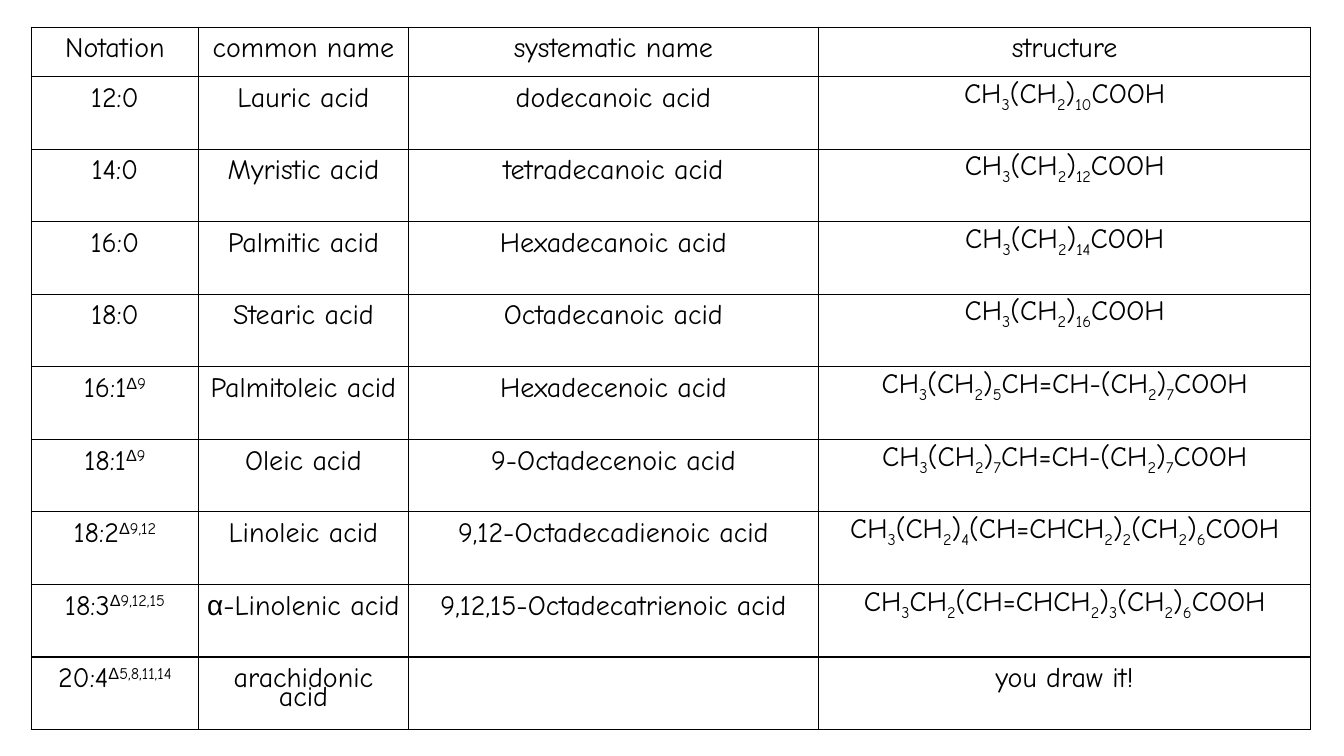
from dataclasses import dataclass
from itertools import groupby

from lxml.etree import SubElement
from pptx import Presentation
from pptx.dml.color import RGBColor
from pptx.enum.text import PP_ALIGN
from pptx.oxml.ns import qn
from pptx.util import Inches, Pt


@dataclass(frozen=True)
class Theme:
    ink: str = "000000"
    font: str = "Comic Neue"
    greek_font: str = "Arial"
    text_size: int = 20
    line_pitch: float = 13.5
    border: int = 1
    subscript: int = -25
    superscript: int = 30


THEME = Theme()

# Table grid, in inches
LEFT, TOP = 0.31, 0.27
COLUMNS = [1.66, 2.08, 4.07, 4.88]
HEADER_HEIGHT, ROW_HEIGHT = 0.49, 0.72
SIDE_MARGIN = 0.07

HEADINGS = ("Notation", "common name", "systematic name", "structure")
ACIDS = [
    ("12:0", "Lauric acid", "dodecanoic acid", "CH3(CH2)10COOH"),
    ("14:0", "Myristic acid", "tetradecanoic acid", "CH3(CH2)12COOH"),
    ("16:0", "Palmitic acid", "Hexadecanoic acid", "CH3(CH2)14COOH"),
    ("18:0", "Stearic acid", "Octadecanoic acid", "CH3(CH2)16COOH"),
    ("16:1Δ9", "Palmitoleic acid", "Hexadecenoic acid", "CH3(CH2)5CH=CH-(CH2)7COOH"),
    ("18:1Δ9", "Oleic acid", "9-Octadecenoic acid", "CH3(CH2)7CH=CH-(CH2)7COOH"),
    ("18:2Δ9,12", "Linoleic acid", "9,12-Octadecadienoic acid",
     "CH3(CH2)4(CH=CHCH2)2(CH2)6COOH"),
    ("18:3Δ9,12,15", "α-Linolenic acid", "9,12,15-Octadecatrienoic acid",
     "CH3CH2(CH=CHCH2)3(CH2)6COOH"),
    ("20:4Δ5,8,11,14", "arachidonic acid", "", "you draw it!"),
]


def notation_pieces(text):
    """Raise the double-bond positions, from the delta onwards."""
    chain, delta, positions = text.partition("Δ")
    return [(chain, 0), (delta, THEME.superscript), (positions, THEME.superscript)]


def name_pieces(text):
    """Keep a leading Greek letter apart from the rest of the name."""
    split = 1 if text.startswith("α") else 0
    return [(text[:split], 0), (text[split:], 0)]


def formula_pieces(text):
    """Lower every group of digits."""
    return [("".join(group), THEME.subscript if is_digit else 0)
            for is_digit, group in groupby(text, str.isdigit)]


PIECES = (notation_pieces, name_pieces, name_pieces, formula_pieces)


def add_span(para, text, baseline):
    span = para.add_run()
    span.text = text
    if text in ("Δ", "α"):
        span.font.name = THEME.greek_font
    if baseline:
        span.font._element.set("baseline", str(baseline * 1000))


def style_cell(cell):
    # Borders come before the fill in the cell properties
    properties = cell._tc.get_or_add_tcPr()
    for side in ("lnL", "lnR", "lnT", "lnB"):
        line = SubElement(properties, qn(f"a:{side}"), w=str(Pt(THEME.border)))
        fill = SubElement(line, qn("a:solidFill"))
        SubElement(fill, qn("a:srgbClr"), val=THEME.ink)
    cell.fill.background()
    cell.margin_left = cell.margin_right = Inches(SIDE_MARGIN)
    cell.margin_top, cell.margin_bottom = Pt(THEME.line_pitch), 0


def fill_cell(cell, pieces):
    style_cell(cell)
    para = cell.text_frame.paragraphs[0]
    para.alignment = PP_ALIGN.CENTER
    para.line_spacing = Pt(THEME.line_pitch)
    para.font.name = THEME.font
    para.font.size = Pt(THEME.text_size)
    para.font.color.rgb = RGBColor.from_string(THEME.ink)
    for text, baseline in pieces:
        if text:
            add_span(para, text, baseline)


def add_acid_table(page):
    rows = [HEADINGS, *ACIDS]
    heights = [HEADER_HEIGHT] + [ROW_HEIGHT] * len(ACIDS)
    table = page.shapes.add_table(
        len(rows), len(COLUMNS), Inches(LEFT), Inches(TOP),
        Inches(sum(COLUMNS)), Inches(sum(heights))).table
    table.first_row = table.horz_banding = False
    for column, width in zip(table.columns, COLUMNS):
        column.width = Inches(width)
    for row, height, texts in zip(table.rows, heights, rows):
        row.height = Inches(height)
        for cell, text, split in zip(row.cells, texts, PIECES):
            fill_cell(cell, split(text))


def main():
    deck = Presentation()
    deck.slide_width, deck.slide_height = Inches(13.33), Inches(7.5)
    page = deck.slides.add_slide(deck.slide_layouts[6])
    add_acid_table(page)
    deck.save("out.pptx")


if __name__ == "__main__":
    main()
